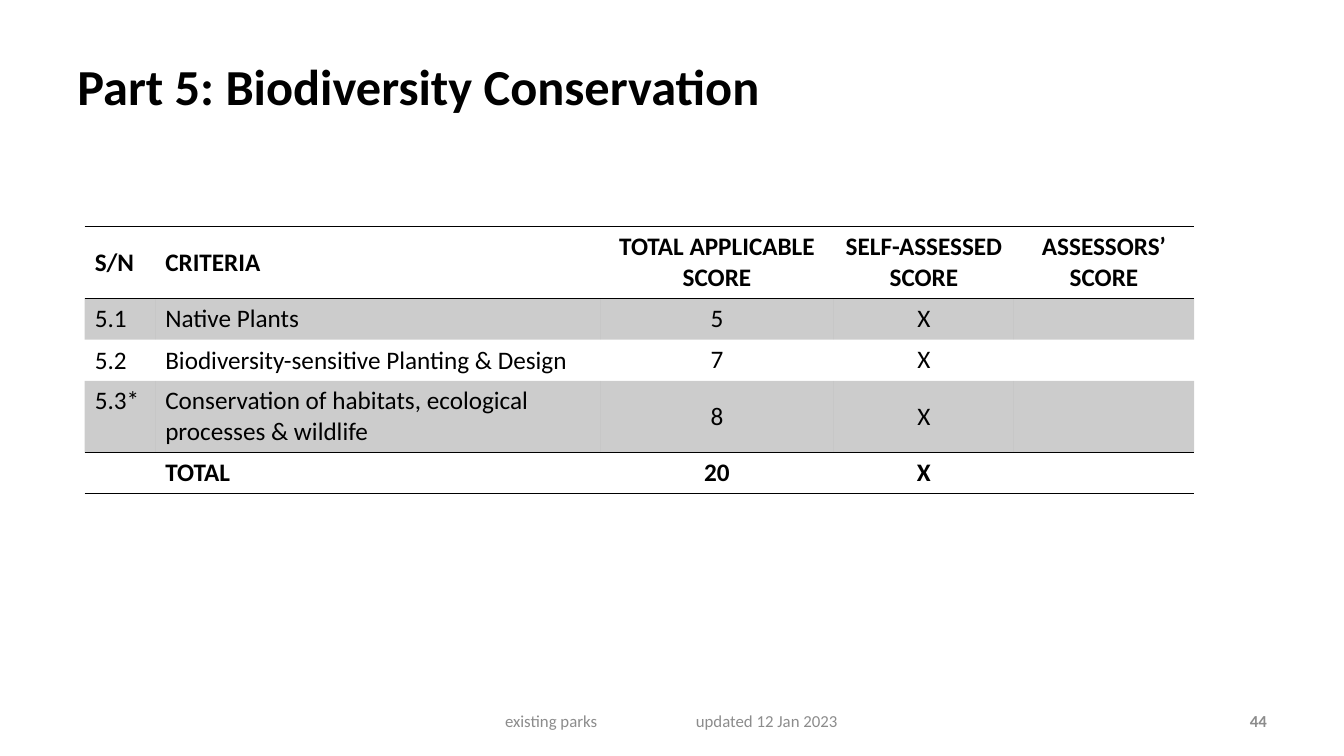
from dataclasses import dataclass
from lxml.etree import SubElement as Sub
from pptx import Presentation
from pptx.dml.color import RGBColor as Rgb
from pptx.enum.text import MSO_ANCHOR as Anchor, PP_ALIGN as Align
from pptx.oxml.ns import qn
from pptx.util import Inches, Pt


@dataclass(frozen=True)
class Theme:
    font: str = "Calibri"
    ink: str = "000000"
    mute: str = "8C8C8C"
    shade: int = 20
    rule: int = 1
    head: int = 36
    body: int = 18
    foot: int = 12


class Page:
    """Draws styled elements on one slide, measured on a 100 by 100 grid."""

    def __init__(self, deck, theme):
        self.theme = theme
        self.col, self.row = deck.slide_width / 100, deck.slide_height / 100
        self.slide = deck.slides.add_slide(deck.slide_layouts[5])

    def box(self, x, y, w, h):
        return (int(x * self.col), int(y * self.row),
                int(w * self.col), int(h * self.row))

    def put(self, para, text, size, color, bold=False, align=Align.LEFT):
        para.alignment = align
        run = para.add_run()
        run.text = text
        font = run.font
        font.name, font.size, font.bold = self.theme.font, Pt(size), bold
        font.color.rgb = Rgb.from_string(color)

    def title(self, text, *area):
        shape = self.slide.shapes.title
        shape.left, shape.top, shape.width, shape.height = self.box(*area)
        frame = shape.text_frame
        frame.word_wrap, frame.vertical_anchor = True, Anchor.MIDDLE
        self.put(frame.paragraphs[0], text, self.theme.head,
                 self.theme.ink, True)

    def note(self, parts, *area, inset=0.75, stop=None, **style):
        shape = self.slide.shapes.add_textbox(*self.box(*area))
        frame = shape.text_frame
        frame.word_wrap, frame.vertical_anchor = True, Anchor.MIDDLE
        frame.margin_left = int(inset * self.col)
        para = frame.paragraphs[0]
        if stop:
            tabs = Sub(para._p.get_or_add_pPr(), qn("a:tabLst"))
            Sub(tabs, qn("a:tab"), pos=str(int(stop * self.col)), algn="l")
        for part in parts:
            self.put(para, part, self.theme.foot, self.theme.mute, **style)

    def edge(self, cell, side, shown):
        width = Pt(self.theme.rule) if shown else 0
        line = Sub(cell._tc.get_or_add_tcPr(), qn("a:ln" + side), w=str(width))
        if shown:
            fill = Sub(line, qn("a:solidFill"))
            Sub(fill, qn("a:srgbClr"), val=self.theme.ink)
        else:
            Sub(line, qn("a:noFill"))

    def tint(self, cell, shaded):
        if not shaded:
            cell.fill.background()
            return
        cell.fill.solid()
        cell.fill.fore_color.rgb = Rgb.from_string(self.theme.ink)
        color = cell._tc.tcPr.find(qn("a:solidFill"))[0]
        Sub(color, qn("a:alpha"), val=str(self.theme.shade * 1000))

    def table(self, data, x, y, cols, rows):
        last = len(data) - 1
        rules = {0, 1, last, last + 1}
        area = self.box(x, y, sum(cols), sum(rows))
        grid = self.slide.shapes.add_table(
            len(rows), len(cols), *area).table
        grid.horz_banding = False
        for col, width in zip(grid.columns, cols):
            col.width = int(width * self.col)
        for r, line in enumerate(data):
            grid.rows[r].height = int(rows[r] * self.row)
            strong = r in (0, last)
            for c, text in enumerate(line):
                cell = grid.cell(r, c)
                for side, shown in (("L", False), ("R", False),
                                    ("T", r in rules), ("B", r + 1 in rules)):
                    self.edge(cell, side, shown)
                self.tint(cell, not strong and r % 2 == 1)
                cell.vertical_anchor = (
                    Anchor.MIDDLE if strong or c > 1 else
                    Anchor.TOP if text.endswith("*") else Anchor.BOTTOM)
                if text:
                    self.put(cell.text_frame.paragraphs[0], text,
                             self.theme.body, self.theme.ink, strong,
                             Align.CENTER if c > 1 else Align.LEFT)


SCORES = [
    ("S/N", "CRITERIA", "TOTAL APPLICABLE SCORE", "SELF-ASSESSED SCORE",
     "ASSESSORS’ SCORE"),
    ("5.1", "Native Plants", "5", "X", ""),
    ("5.2", "Biodiversity-sensitive Planting & Design", "7", "X", ""),
    ("5.3*", "Conservation of habitats, ecological processes & wildlife",
     "8", "X", ""),
    ("", "TOTAL", "20", "X", ""),
]


def main():
    deck = Presentation()
    deck.slide_width, deck.slide_height = Inches(13.33), Inches(7.5)
    page = Page(deck, Theme())
    page.title("Part 5: Biodiversity Conservation", 5, 4, 77.7, 14.5)
    page.table(SCORES, 6.3, 30, (5.25, 33.1, 17.4, 13.4, 13.4),
               (9.4, 5.45, 5.45, 9.4, 5.45))
    page.note(["existing parks", "\t", "updated 12 Jan 2023"],
              34.2, 92.67, 31.65, 5.33, inset=3.38, stop=14.2)
    page.note(["44"], 71.7, 92.67, 23.3, 5.33, bold=True, align=Align.RIGHT)
    deck.save("out.pptx")


if __name__ == "__main__":
    main()
